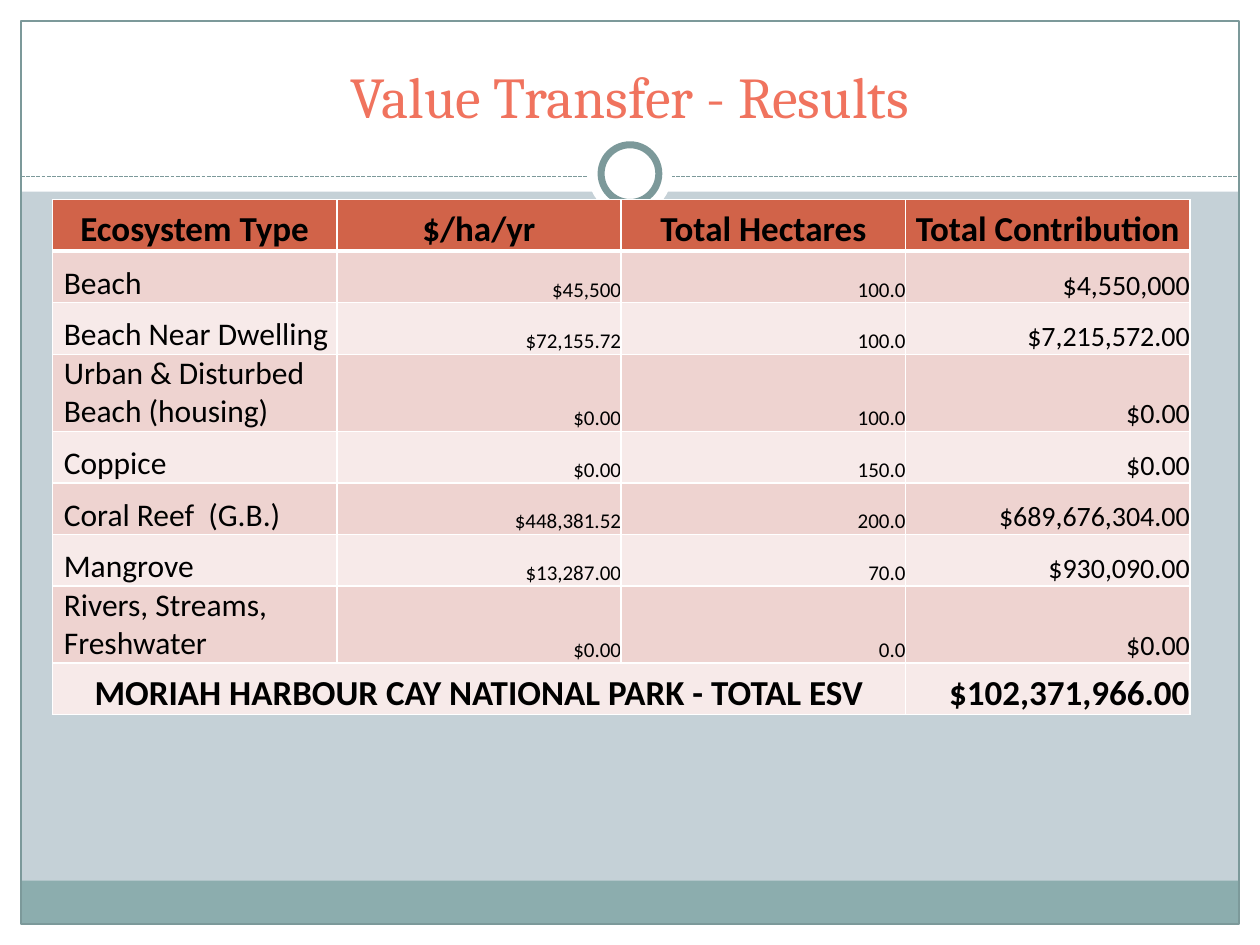
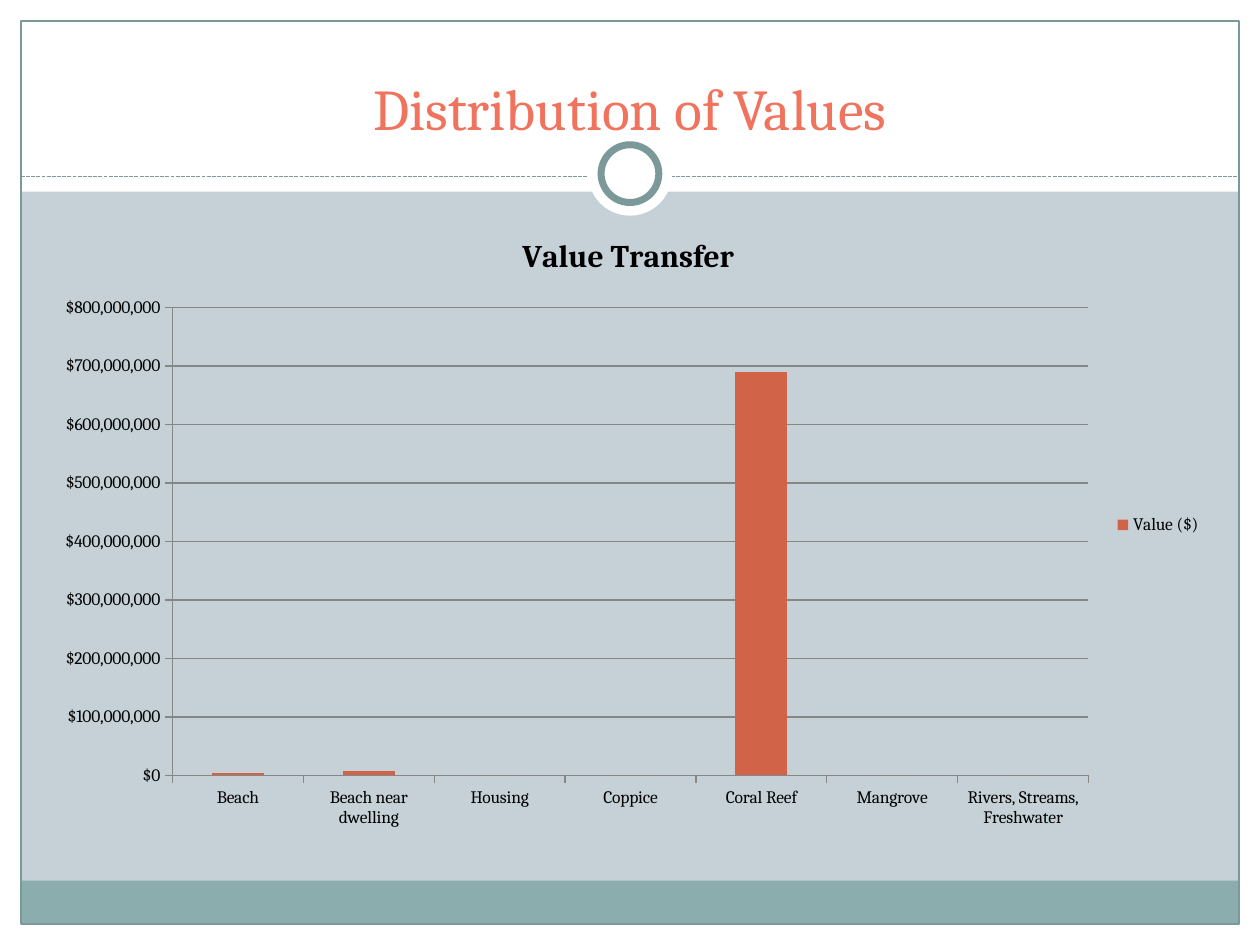
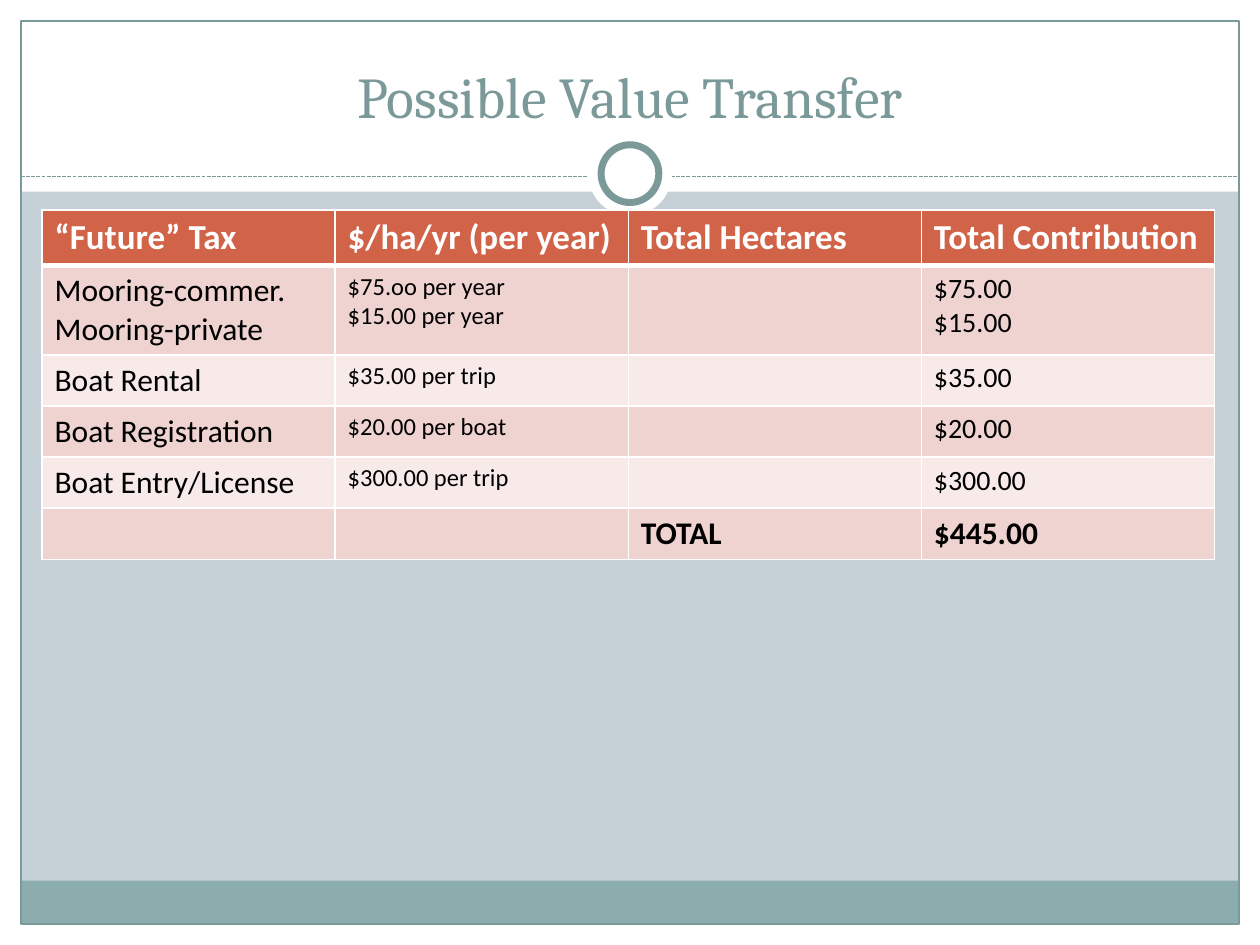
from dataclasses import dataclass

from lxml.etree import SubElement
from pptx import Presentation
from pptx.chart.data import CategoryChartData as Data
from pptx.dml.color import RGBColor as RGB
from pptx.enum.chart import XL_CHART_TYPE as Kind, XL_LEGEND_POSITION as Spot, XL_TICK_MARK as Tick
from pptx.enum.dml import MSO_LINE as Dash
from pptx.enum.shapes import MSO_CONNECTOR as Link, MSO_SHAPE as Form
from pptx.enum.text import MSO_ANCHOR as Anchor, PP_ALIGN as Align
from pptx.oxml.ns import qn
from pptx.util import Pt


@dataclass(frozen=True)
class Theme:
    back: str = "C5D1D7"
    white: str = "FFFFFF"
    black: str = "000000"
    band: str = "8CADAE"
    edge: str = "7C999A"
    coral: str = "F0735E"
    rust: str = "D16349"
    odd: str = "EED3D0"
    even: str = "F7EAE9"
    grid: str = "868686"
    serif: str = "Cambria"
    sans: str = "Calibri"
    title: float = 33
    head: float = 20
    body: float = 18
    mid: float = 16
    note: float = 14
    small: float = 12
    axis: float = 10


@dataclass(frozen=True)
class Part:
    left: float
    top: float
    width: float
    height: float
    fill: str | None = None
    line: str | None = None
    weight: float = 0.75
    form: Form = Form.RECTANGLE


@dataclass(frozen=True)
class Col:
    size: float
    align: Align = Align.LEFT
    pad: float = 0


@dataclass(frozen=True)
class Grid:
    left: float
    top: float
    width: float
    heights: list[float]
    cols: list[Col]
    rows: list[list[str]]
    ink: str
    foot: float
    head: Align = Align.LEFT
    anchor: Anchor = Anchor.TOP
    inset: float = 0
    span: int = 1


T = Theme()
WIDE, HIGH, RIM = 720, 540, 12
INNER = WIDE - 2 * RIM

FRAME = [
    Part(0, HIGH - RIM, WIDE, RIM, T.white),
    Part(0, 0, WIDE, 109.5, T.white),
    Part(0, 0, RIM, HIGH, T.white),
    Part(WIDE - RIM, 0, RIM, HIGH, T.white),
    Part(RIM, 503.25, INNER, 24.75, T.band),
    Part(RIM, RIM, INNER, HIGH - 2 * RIM, line=T.edge),
]
RINGS = [
    Part(336, 75.25, 48, 48, T.white, form=Form.OVAL),
    Part(343.5, 82.75, 33, 33, T.white, T.edge, 4, Form.OVAL),
]


def tint(color: str) -> RGB:
    return RGB.from_string(color)


def style(font, size: float, face: str, color: str, bold: bool = False) -> None:
    font.size, font.name, font.bold = Pt(size), face, bold
    font.color.rgb = tint(color)


def write(frame, text: str, *, size: float, face: str = T.sans, color: str = T.black,
          bold: bool = False, align: Align = Align.LEFT) -> None:
    for i, line in enumerate(text.split("\n")):
        para = frame.add_paragraph() if i else frame.paragraphs[0]
        para.alignment = align
        run = para.add_run()
        run.text = line
        style(run.font, size, face, color, bold)


def draw(slide, part: Part) -> None:
    shape = slide.shapes.add_shape(
        part.form, Pt(part.left), Pt(part.top), Pt(part.width), Pt(part.height))
    shape.shadow.inherit = False
    if part.fill:
        shape.fill.solid()
        shape.fill.fore_color.rgb = tint(part.fill)
    else:
        shape.fill.background()
    if part.line:
        shape.line.color.rgb = tint(part.line)
        shape.line.width = Pt(part.weight)
    else:
        shape.line.fill.background()


def rule(slide, top: float) -> None:
    line = slide.shapes.add_connector(
        Link.STRAIGHT, Pt(RIM), Pt(top), Pt(WIDE - RIM), Pt(top))
    line.line.color.rgb = tint(T.edge)
    line.line.width = Pt(0.75)
    line.line.dash_style = Dash.SQUARE_DOT
    SubElement(line._element.spPr, qn("a:effectLst"))


def start(deck, title: str, color: str = T.coral, top: float = 18):
    slide = deck.slides.add_slide(deck.slide_layouts[6])
    slide.background.fill.solid()
    slide.background.fill.fore_color.rgb = tint(T.back)
    for part in FRAME:
        draw(slide, part)
    rule(slide, 101)
    for part in RINGS:
        draw(slide, part)
    frame = slide.shapes.add_textbox(Pt(24), Pt(top), Pt(672), Pt(60)).text_frame
    frame.word_wrap = True
    frame.vertical_anchor = Anchor.BOTTOM
    write(frame, title, size=T.title, face=T.serif, color=color, align=Align.CENTER)
    return slide


def border(cell, first: bool) -> None:
    props = cell._tc.get_or_add_tcPr()
    widths = {"lnL": 1, "lnR": 1, "lnT": 1, "lnB": 3} if first else {"lnL": 1, "lnR": 1, "lnB": 1}
    for tag, width in widths.items():
        line = SubElement(props, qn(f"a:{tag}"), w=str(Pt(width)))
        fill = SubElement(line, qn("a:solidFill"))
        SubElement(fill, qn("a:srgbClr"), val=T.white)


def table(slide, grid: Grid) -> None:
    last = len(grid.rows) - 1
    body = slide.shapes.add_table(
        last + 1, len(grid.cols), Pt(grid.left), Pt(grid.top),
        Pt(grid.width), Pt(sum(grid.heights))).table
    body.horz_banding = False
    for row, height in zip(body.rows, grid.heights):
        row.height = Pt(height)
    for r, row in enumerate(grid.rows):
        for c, (text, col) in enumerate(zip(row, grid.cols)):
            cell = body.cell(r, c)
            wide = r == last and c == 0 and grid.span > 1
            plain = r in (0, last)
            border(cell, r == 0)
            cell.fill.solid()
            cell.fill.fore_color.rgb = tint(T.rust if r == 0 else T.odd if r % 2 else T.even)
            cell.vertical_anchor = grid.anchor
            cell.margin_left = Pt(grid.inset if plain else col.pad)
            cell.margin_right = Pt(grid.inset)
            cell.margin_top = cell.margin_bottom = Pt(grid.inset / 2)
            if text:
                write(cell.text_frame, text, bold=plain,
                      size=T.head if r == 0 else grid.foot if r == last else col.size,
                      color=grid.ink if r == 0 else T.black,
                      align=grid.head if r == 0 or wide else col.align)
    if grid.span > 1:
        body.cell(last, 0).merge(body.cell(last, grid.span - 1))


def plot(slide, title: str, name: str, values: dict[str, float]) -> None:
    data = Data()
    data.categories = list(values)
    data.add_series(name, list(values.values()))
    chart = slide.shapes.add_chart(
        Kind.COLUMN_CLUSTERED, Pt(24), Pt(120), Pt(670), Pt(360), data).chart
    style(chart.font, T.axis, T.serif, T.black)
    chart.has_title = True
    write(chart.chart_title.text_frame, title, size=T.body, face=T.serif,
          bold=True, align=Align.CENTER)
    chart.has_legend = True
    chart.legend.position = Spot.RIGHT
    chart.legend.include_in_layout = False
    bars = chart.plots[0]
    bars.gap_width = 150
    bars.vary_by_categories = False
    fill = bars.series[0].format.fill
    fill.solid()
    fill.fore_color.rgb = tint(T.rust)
    chart.value_axis.has_major_gridlines = True
    chart.value_axis.tick_labels.number_format = '"$"#,##0'
    chart.value_axis.tick_labels.number_format_is_linked = False
    for axis in (chart.category_axis, chart.value_axis):
        axis.major_tick_mark = Tick.OUTSIDE
        axis.format.line.color.rgb = tint(T.grid)
    chart.value_axis.major_gridlines.format.line.color.rgb = tint(T.grid)


RESULTS = Grid(
    left=30, top=114, width=650,
    heights=[29.5] * 3 + [44] + [29.5] * 3 + [44, 29.5],
    cols=[Col(T.body, pad=6.5), Col(T.small, Align.RIGHT),
          Col(T.small, Align.RIGHT), Col(T.mid, Align.RIGHT)],
    rows=[
        ["Ecosystem Type", "$/ha/yr", "Total Hectares", "Total Contribution"],
        ["Beach", "$45,500", "100.0", "$4,550,000"],
        ["Beach Near Dwelling", "$72,155.72", "100.0", "$7,215,572.00"],
        ["Urban & Disturbed Beach (housing)", "$0.00", "100.0", "$0.00"],
        ["Coppice", "$0.00", "150.0", "$0.00"],
        ["Coral Reef  (G.B.)", "$448,381.52", "200.0", "$689,676,304.00"],
        ["Mangrove", "$13,287.00", "70.0", "$930,090.00"],
        ["Rivers, Streams, Freshwater", "$0.00", "0.0", "$0.00"],
        ["MORIAH HARBOUR CAY NATIONAL PARK - TOTAL ESV", "", "", "$102,371,966.00"],
    ],
    ink=T.black, foot=T.head, head=Align.CENTER, anchor=Anchor.BOTTOM, span=3)

TAXES = Grid(
    left=24, top=120, width=670,
    heights=[31.75, 51] + [29.25] * 4,
    cols=[Col(size, pad=7.2) for size in (T.body, T.note, T.body, T.mid)],
    rows=[
        ["“Future” Tax", "$/ha/yr (per year)", "Total Hectares", "Total Contribution"],
        ["Mooring-commer.\nMooring-private", "$75.oo per year\n$15.00 per year", "",
         "$75.00\n$15.00"],
        ["Boat Rental", "$35.00 per trip", "", "$35.00"],
        ["Boat Registration", "$20.00 per boat", "", "$20.00"],
        ["Boat Entry/License", "$300.00 per trip", "", "$300.00"],
        ["", "", "TOTAL", "$445.00"],
    ],
    ink=T.white, foot=T.body, inset=7.2)

VALUES = {
    "Beach": 5_000_000,
    "Beach near dwelling": 7_000_000,
    "Housing": 0,
    "Coppice": 0,
    "Coral Reef": 690_000_000,
    "Mangrove": 0,
    "Rivers, Streams, Freshwater": 0,
}


def main() -> None:
    deck = Presentation()
    deck.slide_width, deck.slide_height = Pt(WIDE), Pt(HIGH)
    table(start(deck, "Value Transfer - Results"), RESULTS)
    plot(start(deck, "Distribution of Values", top=24.5), "Value Transfer", "Value ($)", VALUES)
    table(start(deck, "Possible Value Transfer", T.edge), TAXES)
    deck.save("out.pptx")


if __name__ == "__main__":
    main()
